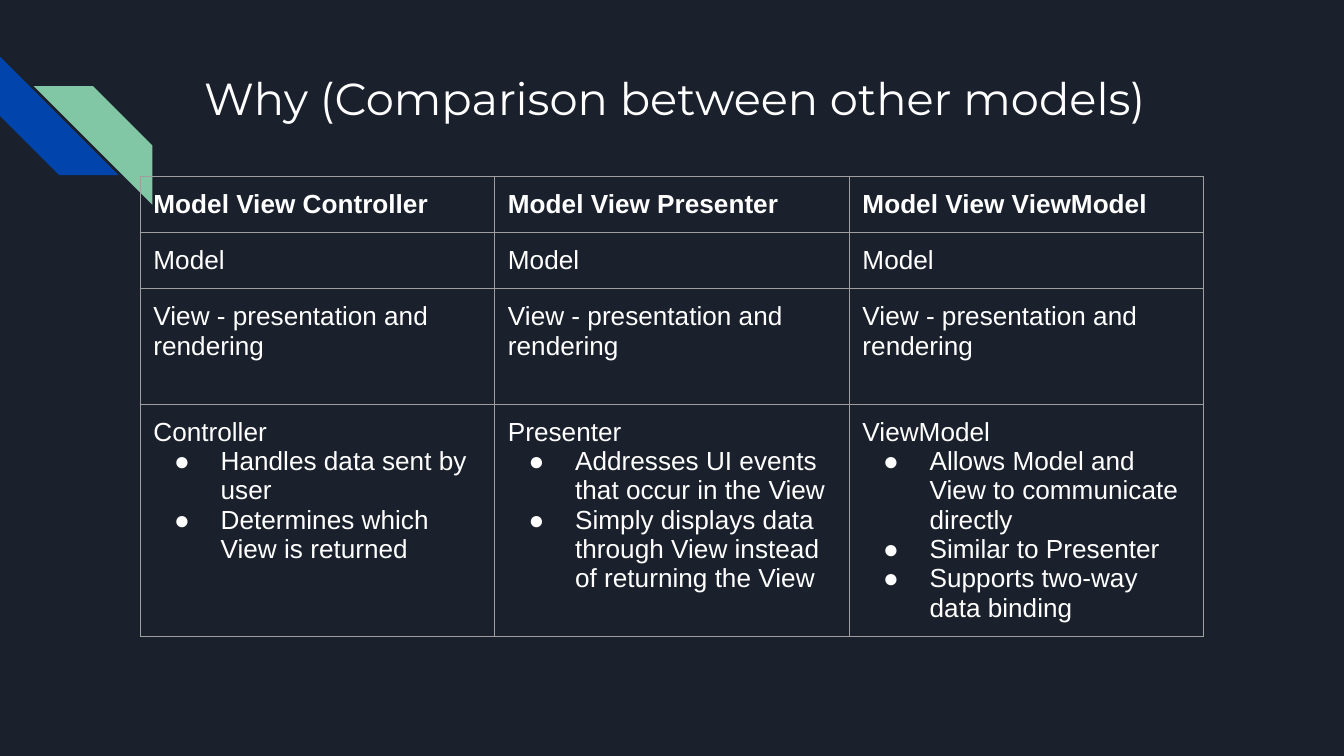
from pptx import Presentation
from pptx.dml.color import RGBColor
from pptx.enum.shapes import MSO_SHAPE
from pptx.enum.text import MSO_ANCHOR, MSO_AUTO_SIZE, PP_ALIGN
from pptx.oxml import parse_xml
from pptx.oxml.ns import nsdecls
from pptx.util import Cm, Pt

BACKGROUND = RGBColor(0x1B, 0x21, 0x2C)
BLUE = RGBColor(0x01, 0x45, 0xAC)
GREEN = RGBColor(0x82, 0xC7, 0xA5)
WHITE = RGBColor(0xFF, 0xFF, 0xFF)
BORDER = RGBColor(0x9E, 0x9E, 0x9E)

MARGIN = Cm(0.25)
STRIPE_SIZE = Cm(2.24)
COLUMN_WIDTH = Cm(6.7)
ROW_HEIGHTS = [Cm(1.06), Cm(1.06), Cm(2.18), Cm(4.39)]

# One entry per pattern: its name, its third part and what that part does.
PATTERNS = [
    ("Model View Controller", "Controller",
     ["Handles data sent by user", "Determines which View is returned"]),
    ("Model View Presenter", "Presenter",
     ["Addresses UI events that occur in the View",
      "Simply displays data through View instead of returning the View"]),
    ("Model View ViewModel", "ViewModel",
     ["Allows Model and View to communicate directly",
      "Similar to Presenter", "Supports two-way data binding"]),
]


def format_runs(paragraph, font_name, size, bold=False):
    for run in paragraph.runs:
        run.font.name = font_name
        run.font.size = Pt(size)
        run.font.bold = bold
        run.font.color.rgb = WHITE


def set_margins(holder):
    """Give a text frame or table cell the same margin on all sides."""
    holder.margin_left = holder.margin_right = MARGIN
    holder.margin_top = holder.margin_bottom = MARGIN


def add_stripe(slide, left, top, color, rotation=0, flipped=False):
    shape = slide.shapes.add_shape(
        MSO_SHAPE.DIAGONAL_STRIPE, left, top, STRIPE_SIZE, STRIPE_SIZE)
    shape.adjustments[0] = 0.5
    shape.rotation = rotation
    shape.shadow.inherit = False
    shape.fill.solid()
    shape.fill.fore_color.rgb = color
    shape.line.fill.background()
    if flipped:
        shape._element.spPr.xfrm.set("flipH", "1")


def set_title(slide, text):
    title = slide.shapes.title
    title.left, title.top = Cm(3.61), Cm(1.09)
    title.width, title.height = Cm(19.56), Cm(2.54)
    text_frame = title.text_frame
    text_frame.text = text
    text_frame.word_wrap = True
    text_frame.auto_size = MSO_AUTO_SIZE.NONE
    text_frame.vertical_anchor = MSO_ANCHOR.TOP
    set_margins(text_frame)
    paragraph = text_frame.paragraphs[0]
    paragraph.alignment = PP_ALIGN.LEFT
    format_runs(paragraph, "Montserrat", 24)


def add_bullet(paragraph):
    properties = paragraph._p.get_or_add_pPr()
    properties.set("marL", str(Cm(1.27)))
    properties.set("indent", str(-Cm(0.88)))
    for content in (
        f'<a:buClr {nsdecls("a")}><a:srgbClr val="{WHITE}"/></a:buClr>',
        f'<a:buFont {nsdecls("a")} typeface="Arial"/>',
        f'<a:buChar {nsdecls("a")} char="●"/>',
    ):
        properties.append(parse_xml(content))


def add_borders(cell):
    properties = cell._tc.get_or_add_tcPr()
    for side in ("lnL", "lnR", "lnT", "lnB"):
        properties.append(parse_xml(
            f'<a:{side} {nsdecls("a")} w="{Pt(0.75)}"><a:solidFill>'
            f'<a:srgbClr val="{BORDER}"/></a:solidFill></a:{side}>'))


def fill_cell(cell, text, bullets=(), bold=False):
    set_margins(cell)
    add_borders(cell)
    cell.fill.background()
    text_frame = cell.text_frame
    text_frame.text = text
    for bullet in bullets:
        paragraph = text_frame.add_paragraph()
        paragraph.text = bullet
        add_bullet(paragraph)
    for paragraph in text_frame.paragraphs:
        format_runs(paragraph, "Arial", 14, bold)


def add_comparison_table(slide):
    table = slide.shapes.add_table(
        len(ROW_HEIGHTS), len(PATTERNS), Cm(2.65), Cm(3.34),
        COLUMN_WIDTH * len(PATTERNS), sum(ROW_HEIGHTS)).table
    table.first_row = False
    table.horz_banding = False
    for row, height in zip(table.rows, ROW_HEIGHTS):
        row.height = height
    for column, (name, part, duties) in enumerate(PATTERNS):
        table.columns[column].width = COLUMN_WIDTH
        fill_cell(table.cell(0, column), name, bold=True)
        fill_cell(table.cell(1, column), "Model")
        fill_cell(table.cell(2, column), "View - presentation and rendering")
        fill_cell(table.cell(3, column), part, duties)


def main():
    presentation = Presentation()
    presentation.slide_width = Cm(25.4)
    presentation.slide_height = Cm(14.29)
    slide = presentation.slides.add_slide(presentation.slide_layouts[5])
    slide.background.fill.solid()
    slide.background.fill.fore_color.rgb = BACKGROUND

    add_stripe(slide, Cm(0), Cm(1.07), BLUE, rotation=270)
    add_stripe(slide, Cm(0.64), Cm(1.63), GREEN, flipped=True)
    set_title(slide, "Why (Comparison between other models)")
    add_comparison_table(slide)
    presentation.save("out.pptx")


if __name__ == "__main__":
    main()
